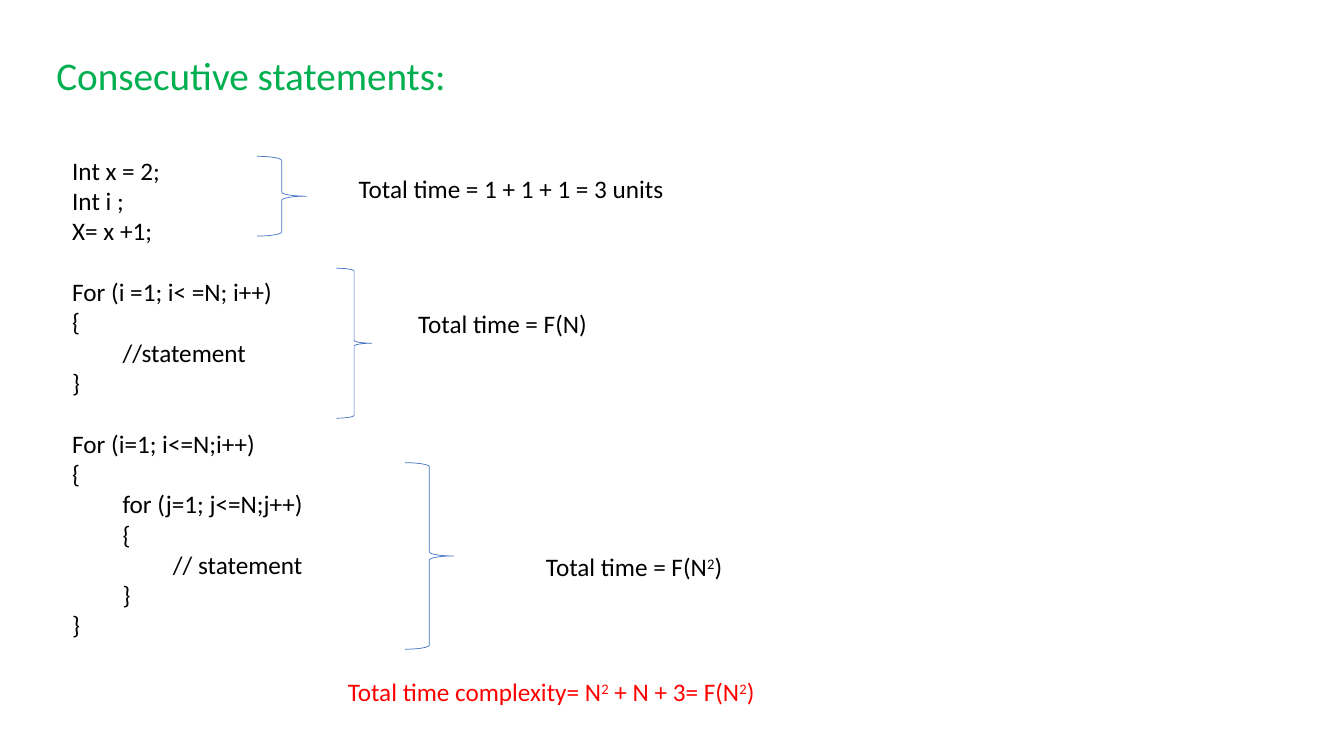
"""Build a slide on the running time of consecutive statements."""
from dataclasses import dataclass

from pptx import Presentation
from pptx import util as u
from pptx.dml.color import RGBColor
from pptx.enum import shapes, text
from pptx.slide import Slide

FONT = "Calibri"
BLACK, GREEN, RED, BLUE = "000000", "00B050", "FF0000", "4472C4"
BODY_SIZE = 18
BLOCK_GAP = 22
LABEL_HEIGHT = 1.02

CODE_BLOCKS = [
    ["Int x = 2;", "Int i ;", "X= x +1;"],
    ["For (i =1; i< =N; i++)", "{", "\t//statement", "}"],
    ["For (i=1; i<=N;i++)", "{", "\tfor (j=1; j<=N;j++)", "\t{",
     "\t\t// statement", "\t}", "}"],
]


@dataclass(frozen=True)
class Box:
    left: float
    top: float
    width: float
    height: float

    def lengths(self) -> list[u.Cm]:
        return [u.Cm(value) for value in (self.left, self.top, self.width, self.height)]


@dataclass(frozen=True)
class TextBlock:
    box: Box
    blocks: list[list[str]]
    color: str = BLACK
    size: int = BODY_SIZE
    centered: bool = False


TEXT_BLOCKS = [
    TextBlock(Box(1.17, 1.17, 16.23, 1.45), [["Consecutive statements:"]], GREEN, 28),
    TextBlock(Box(1.57, 3.78, 11.56, 12.57), CODE_BLOCKS),
    TextBlock(Box(8.79, 4.24, 9.09, LABEL_HEIGHT), [["Total time = 1 + 1 + 1 = 3 units"]]),
    TextBlock(Box(10.29, 7.65, 7.14, LABEL_HEIGHT), [["Total time = F(N)"]]),
    TextBlock(Box(13.51, 13.77, 7.14, LABEL_HEIGHT), [["Total time = F(N^2^)"]]),
    TextBlock(Box(2.97, 16.92, 21.84, LABEL_HEIGHT),
              [["Total time complexity= N^2^ + N + 3= F(N^2^)"]], RED, centered=True),
]

BRACES = [
    Box(6.48, 3.94, 1.24, 2.01),
    Box(8.48, 6.76, 0.89, 3.78),
    Box(10.21, 11.66, 1.22, 4.7),
]


def rgb(color: str) -> RGBColor:
    """Turn a hex string into a colour."""
    return RGBColor.from_string(color)


def draw_text(slide: Slide, block: TextBlock) -> None:
    """Draw lines of text, with ^...^ marking superscripts."""
    frame = slide.shapes.add_textbox(*block.box.lengths()).text_frame
    frame.word_wrap = True
    lines = [(line, block_index > 0 and line_index == 0)
             for block_index, code in enumerate(block.blocks)
             for line_index, line in enumerate(code)]
    for index, (line, starts_block) in enumerate(lines):
        paragraph = frame.add_paragraph() if index else frame.paragraphs[0]
        if starts_block:
            paragraph.space_before = u.Pt(BLOCK_GAP)
        if block.centered:
            paragraph.alignment = text.PP_ALIGN.CENTER
        paragraph.font.name = FONT
        paragraph.font.size = u.Pt(block.size)
        paragraph.font.color.rgb = rgb(block.color)
        for part_index, part in enumerate(line.split("^")):
            run = paragraph.add_run()
            run.text = part
            if part_index % 2:
                run._r.get_or_add_rPr().set("baseline", "30000")


def draw_brace(slide: Slide, box: Box) -> None:
    """Draw a thin right brace beside a code block."""
    shape = slide.shapes.add_shape(shapes.MSO_SHAPE.RIGHT_BRACE, *box.lengths())
    shape.shadow.inherit = False
    shape.fill.background()
    shape.line.color.rgb = rgb(BLUE)
    shape.line.width = u.Pt(0.5)


def main() -> None:
    """Build and save the presentation."""
    presentation = Presentation()
    presentation.slide_width = u.Cm(33.87)
    presentation.slide_height = u.Cm(19.05)
    slide = presentation.slides.add_slide(presentation.slide_layouts[6])
    for block in TEXT_BLOCKS:
        draw_text(slide, block)
    for box in BRACES:
        draw_brace(slide, box)
    presentation.save("out.pptx")


if __name__ == "__main__":
    main()
